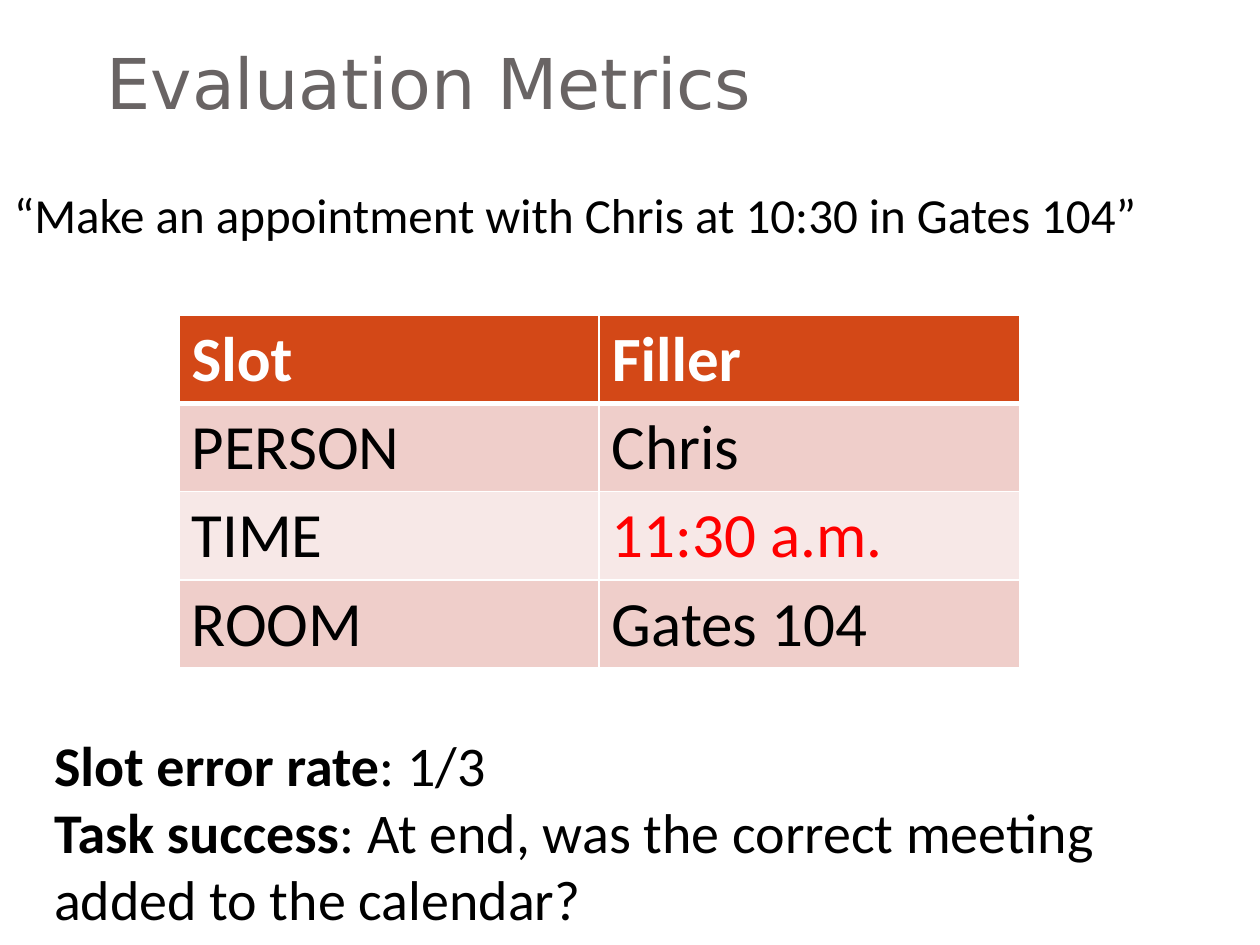
from lxml import etree
from pptx import Presentation, util as u
from pptx.dml.color import RGBColor
from pptx.enum import text
from pptx.oxml import ns


def color(hex_code):
    return RGBColor.from_string(hex_code)


def write(paragraph, words, size=32, font="Calibri", ink="000000", bold=False):
    run = paragraph.add_run()
    run.text = words
    run.font.size = u.Pt(size)
    run.font.name = font
    run.font.bold = bold
    run.font.color.rgb = color(ink)


deck = Presentation()
deck.slide_width, deck.slide_height = u.Cm(25.4), u.Cm(19.05)
slide = deck.slides.add_slide(deck.slide_layouts[6])

# Text areas: left, top, width, height in cm
areas = [(1.9, 0.64, 19.25, 2.1), (0.03, 3.6, 23.47, 1.45), (0.84, 14.6, 23.29, 4.37)]
frames = []
for area in areas:
    frame = slide.shapes.add_textbox(*map(u.Cm, area)).text_frame
    frame.word_wrap = True
    frames.append(frame)
heading, request, measures = frames

# Title
heading.vertical_anchor = text.MSO_ANCHOR.BOTTOM
heading.margin_bottom = u.Cm(0.25)
write(heading.paragraphs[0], "Evaluation Metrics", size=40, font="DejaVu Sans", ink="696464")

# Spoken request
write(request.paragraphs[0], "“Make an appointment with Chris at 10:30 in Gates 104”", size=28)

# Slots and their fillers
slots = [("Slot", "Filler"), ("PERSON", "Chris"), ("TIME", "11:30 a.m."), ("ROOM", "Gates 104")]
row_fills = ["D34817", "EFCECA", "F7E8E7", "EFCECA"]
wrong_filler = "11:30 a.m."
slot_table = slide.shapes.add_table(
    len(slots), 2, u.Cm(3.61), u.Cm(6.35), u.Cm(16.94), u.Cm(7.12)).table
for r, row in enumerate(slots):
    for c, words in enumerate(row):
        cell = slot_table.cell(r, c)
        header = r == 0
        ink = "FFFFFF" if header else "FF0000" if words == wrong_filler else "000000"
        write(cell.text_frame.paragraphs[0], words, size=36, ink=ink, bold=header)

        # White cell borders, thicker between header and body
        widths = {"lnL": 1, "lnR": 1, "lnT": 3 if r == 1 else 1, "lnB": 3 if header else 1}
        for side, width in widths.items():
            border = etree.SubElement(
                cell._tc.get_or_add_tcPr(), ns.qn(f"a:{side}"), w=str(u.Pt(width)))
            paint = etree.SubElement(border, ns.qn("a:solidFill"))
            etree.SubElement(paint, ns.qn("a:srgbClr"), val="FFFFFF")
        cell.fill.solid()
        cell.fill.fore_color.rgb = color(row_fills[r])

# Metrics
metrics = [
    ("Slot error rate", ": 1/3"),
    ("Task success", ": At end, was the correct meeting added to the calendar?"),
]
for i, (metric, meaning) in enumerate(metrics):
    line = measures.add_paragraph() if i else measures.paragraphs[0]
    write(line, metric, bold=True)
    write(line, meaning)

deck.save("out.pptx")
